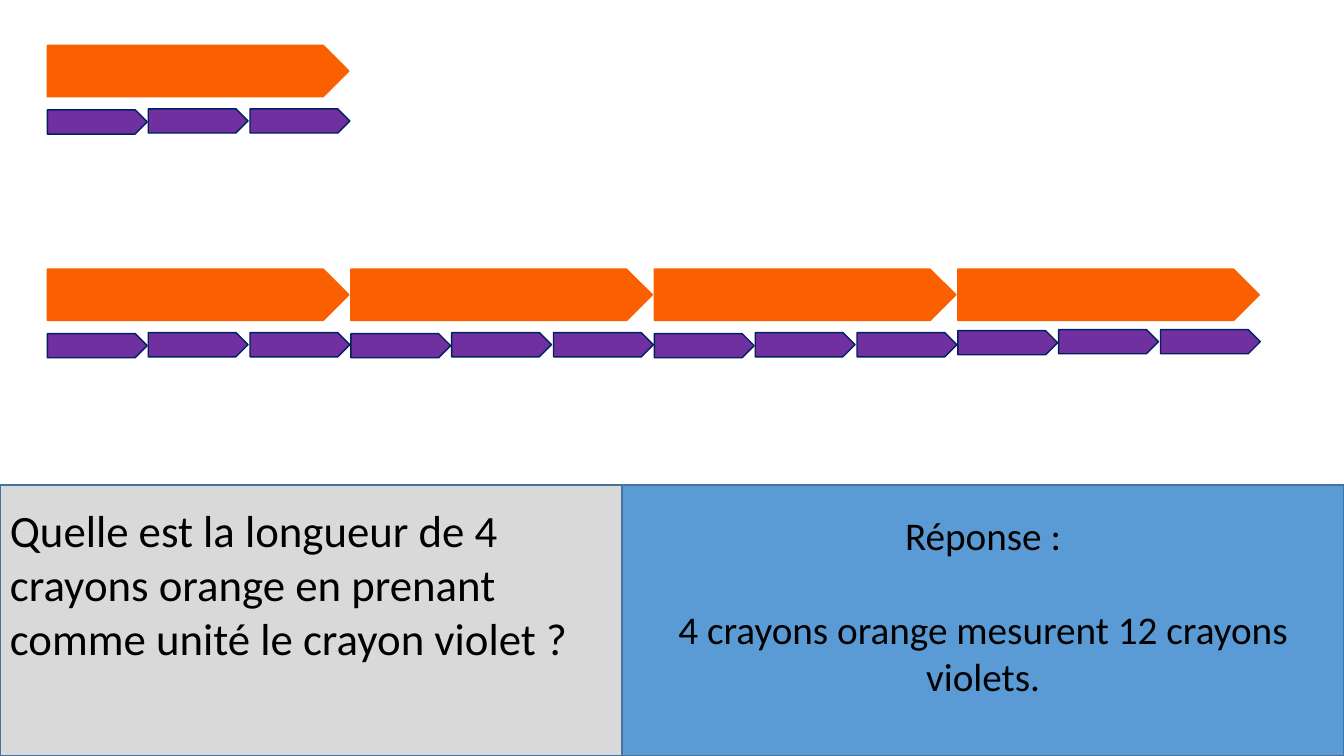
from pptx import Presentation
from pptx.dml.color import RGBColor
from pptx.enum.shapes import MSO_SHAPE
from pptx.enum.text import MSO_ANCHOR, PP_ALIGN
from pptx.util import Pt

PX = 9144  # 100 px to the inch
WIDE, HIGH = 1333, 750
COLORS = {
    "orange": "FA5F00", "violet": "7030A0", "navy": "002060",
    "grey": "D9D9D9", "blue": "5B9BD5", "edge": "43739E", "black": "000000",
}


def color(name):
    return RGBColor.from_string(COLORS[name])


def scale(*box):
    return [n * PX for n in box]


def add_shape(slide, kind, box, fill, line):
    shape = slide.shapes.add_shape(kind, *scale(*box))
    shape.shadow.inherit = False
    shape.fill.solid()
    shape.fill.fore_color.rgb = color(fill)
    shape.line.color.rgb = color(line)
    shape.line.width = Pt(1)
    return shape


def style(par, text, size):
    par.text = text
    par.font.size = Pt(size)
    par.font.name = "Calibri"
    par.font.color.rgb = color("black")


def add_pencil(slide, left, top, drop=64):
    """One orange pencil above the three violet ones that measure it."""
    pen = MSO_SHAPE.PENTAGON
    add_shape(slide, pen, (left, top, 299, 51), "orange", "orange")
    for i in range(3):
        lift = 1 if i else 0
        box = (left + round(i * 100.5), top + drop - lift, 99, 24)
        add_shape(slide, pen, box, "violet", "navy")


def add_question(slide, left, top, width, height):
    add_shape(slide, MSO_SHAPE.RECTANGLE, (left, top, WIDE, height), "grey", "edge")
    frame = slide.shapes.add_textbox(*scale(left, top + 13, width, 172)).text_frame
    frame.word_wrap = True
    style(frame.paragraphs[0],
          "Quelle est la longueur de 4 crayons orange en prenant "
          "comme unité le crayon violet ?", 32)


def add_answer(slide, left, top, width, height):
    box = (left, top, width, height)
    frame = add_shape(slide, MSO_SHAPE.RECTANGLE, box, "blue", "edge").text_frame
    frame.word_wrap = True
    frame.vertical_anchor = MSO_ANCHOR.MIDDLE
    frame.margin_bottom = 35 * PX
    head, body = frame.paragraphs[0], frame.add_paragraph()
    style(head, "Réponse :", 28)
    style(body, "4 crayons orange mesurent 12 crayons violets.", 28)
    body.space_before = Pt(34)
    for par in (head, body):
        par.alignment = PP_ALIGN.CENTER


def main():
    deck = Presentation()
    deck.slide_width, deck.slide_height = scale(WIDE, HIGH)
    slide = deck.slides.add_slide(deck.slide_layouts[6])

    # Question and answer panels
    add_question(slide, 0, 481, 617, 269)
    add_answer(slide, 617, 481, 716, 269)

    # One pencil, then a row of four
    add_pencil(slide, 47, 45)
    for i, drop in enumerate((64, 64, 64, 61)):
        add_pencil(slide, 47 + 301 * i, 267, drop)

    deck.save("out.pptx")


if __name__ == "__main__":
    main()
